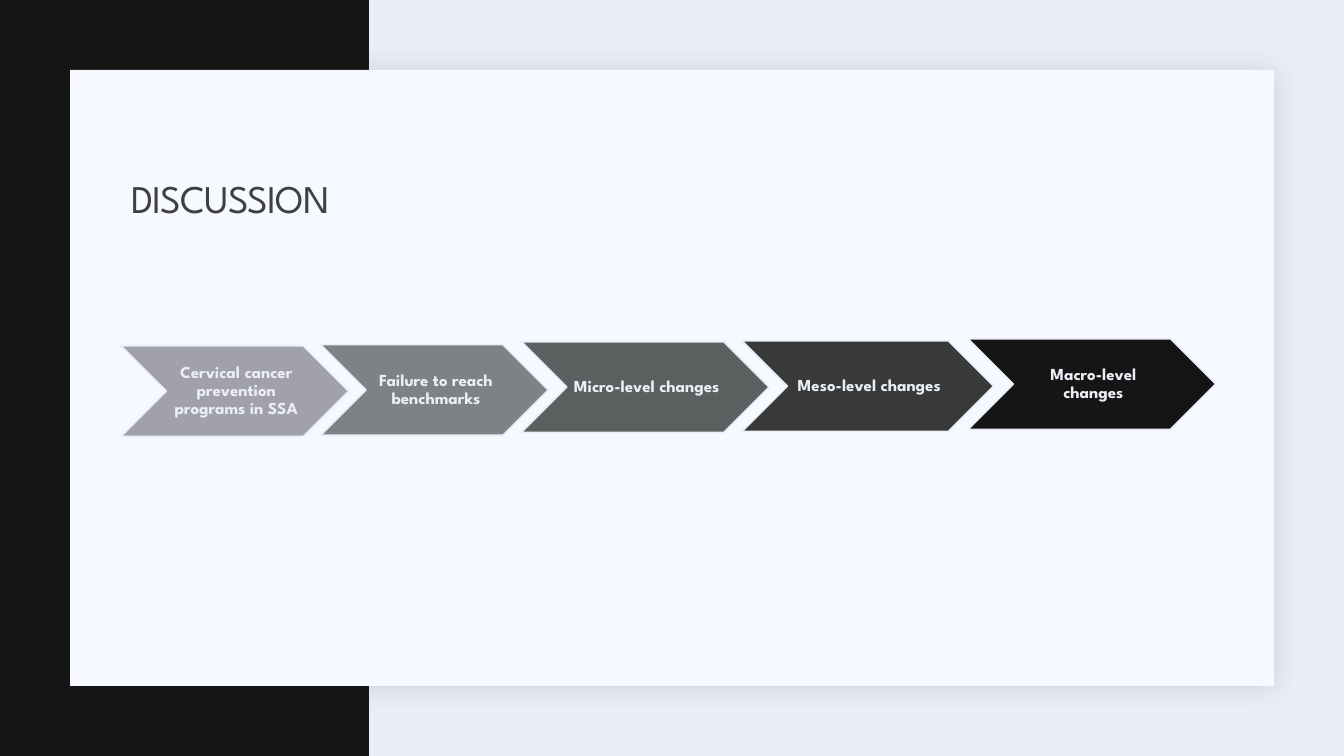
from dataclasses import dataclass

import lxml.etree
import pptx
import pptx.dml.color
import pptx.enum.shapes
import pptx.enum.text
import pptx.oxml.ns
import pptx.shapes.autoshape
import pptx.slide
import pptx.text.text
import pptx.util

Pt = pptx.util.Pt
RGBColor = pptx.dml.color.RGBColor
ShapeType = pptx.enum.shapes.MSO_SHAPE
Align = pptx.enum.text.PP_ALIGN
Anchor = pptx.enum.text.MSO_ANCHOR

FONT = "League Spartan"
BACKGROUND = RGBColor(0xEC, 0xEE, 0xF7)
PANEL = RGBColor(0xF6, 0xF9, 0xFF)
BLACK = RGBColor(0x14, 0x15, 0x14)
TITLE_GREY = RGBColor(0x40, 0x40, 0x40)
SHADOW = RGBColor(0x1F, 0x21, 0x25)
STEP_HEIGHT = 64.8


@dataclass(frozen=True)
class Step:
    text: str
    left: float
    top: float
    width: float
    color: RGBColor


STEPS = [
    Step("Cervical cancer prevention programs in SSA", 86.4, 247, 162.7, RGBColor(0xA1, 0xA2, 0xA9)),
    Step("Failure to reach benchmarks", 229, 246.2, 162.7, RGBColor(0x7C, 0x82, 0x86)),
    Step("Micro-level changes", 372.4, 244.1, 177.1, RGBColor(0x5A, 0x60, 0x60)),
    Step("Meso-level changes", 529.9, 243.4, 180, RGBColor(0x37, 0x3A, 0x39)),
    Step("Macro-level changes", 691.4, 242, 177.1, BLACK),
]


def add_filled_shape(slide: pptx.slide.Slide, kind: ShapeType, left: float, top: float,
                     width: float, height: float, color: RGBColor) -> pptx.shapes.autoshape.Shape:
    shape = slide.shapes.add_shape(kind, Pt(left), Pt(top), Pt(width), Pt(height))
    shape.shadow.inherit = False
    shape.fill.solid()
    shape.fill.fore_color.rgb = color
    shape.line.fill.background()
    return shape


def add_soft_shadow(shape: pptx.shapes.autoshape.Shape) -> None:
    qn = pptx.oxml.ns.qn
    effects = shape.element.spPr.find(qn("a:effectLst"))
    shadow = lxml.etree.SubElement(effects, qn("a:outerShdw"), blurRad=str(Pt(20)),
                                   dist=str(Pt(2)), dir="2700000", algn="tl", rotWithShape="0")
    color = lxml.etree.SubElement(shadow, qn("a:srgbClr"), val=str(SHADOW))
    lxml.etree.SubElement(color, qn("a:alpha"), val="15000")


def write_text(frame: pptx.text.text.TextFrame, text: str, *, size: float, color: RGBColor,
               bold: bool = False, align: Align = Align.LEFT, spacing: float = 0) -> None:
    frame.word_wrap = True
    frame.auto_size = pptx.enum.text.MSO_AUTO_SIZE.NONE
    frame.vertical_anchor = Anchor.MIDDLE
    paragraph = frame.paragraphs[0]
    paragraph.alignment = align
    paragraph.line_spacing = 0.9
    run = paragraph.add_run()
    run.text = text
    run.font.name = FONT
    run.font.size = Pt(size)
    run.font.bold = bold
    run.font.color.rgb = color
    if spacing:
        properties = run.font.fill._xPr
        properties.set("spc", str(round(spacing * 100)))


def add_step(slide: pptx.slide.Slide, step: Step) -> None:
    shape = add_filled_shape(slide, ShapeType.CHEVRON, step.left, step.top,
                             step.width, STEP_HEIGHT, step.color)
    shape.line.color.rgb = BACKGROUND
    shape.line.width = Pt(1.25)
    frame = shape.text_frame
    frame.margin_left = Pt(3.6)
    frame.margin_top = frame.margin_right = frame.margin_bottom = Pt(1.44)
    write_text(frame, step.text, size=12, color=BACKGROUND, bold=True, align=Align.CENTER)


def add_title(slide: pptx.slide.Slide, text: str) -> None:
    """Fill the title placeholder and bring it in front of the panel."""
    title = slide.shapes.title
    title.left, title.top, title.width, title.height = Pt(86.4), Pt(120.2), Pt(792), Pt(46.1)
    write_text(title.text_frame, text, size=28, color=TITLE_GREY, spacing=-0.5)
    title.element.getparent().append(title.element)


def main() -> None:
    presentation = pptx.Presentation()
    presentation.slide_width = Pt(960)
    presentation.slide_height = Pt(540)
    slide = presentation.slides.add_slide(presentation.slide_layouts[5])
    slide.background.fill.solid()
    slide.background.fill.fore_color.rgb = BACKGROUND

    add_filled_shape(slide, ShapeType.RECTANGLE, 0, 0, 263.5, 540, BLACK)
    panel = add_filled_shape(slide, ShapeType.RECTANGLE, 50, 50, 860, 440, PANEL)
    add_soft_shadow(panel)
    for step in STEPS:
        add_step(slide, step)
    add_title(slide, "DISCUSSION")
    presentation.save("out.pptx")


if __name__ == "__main__":
    main()
